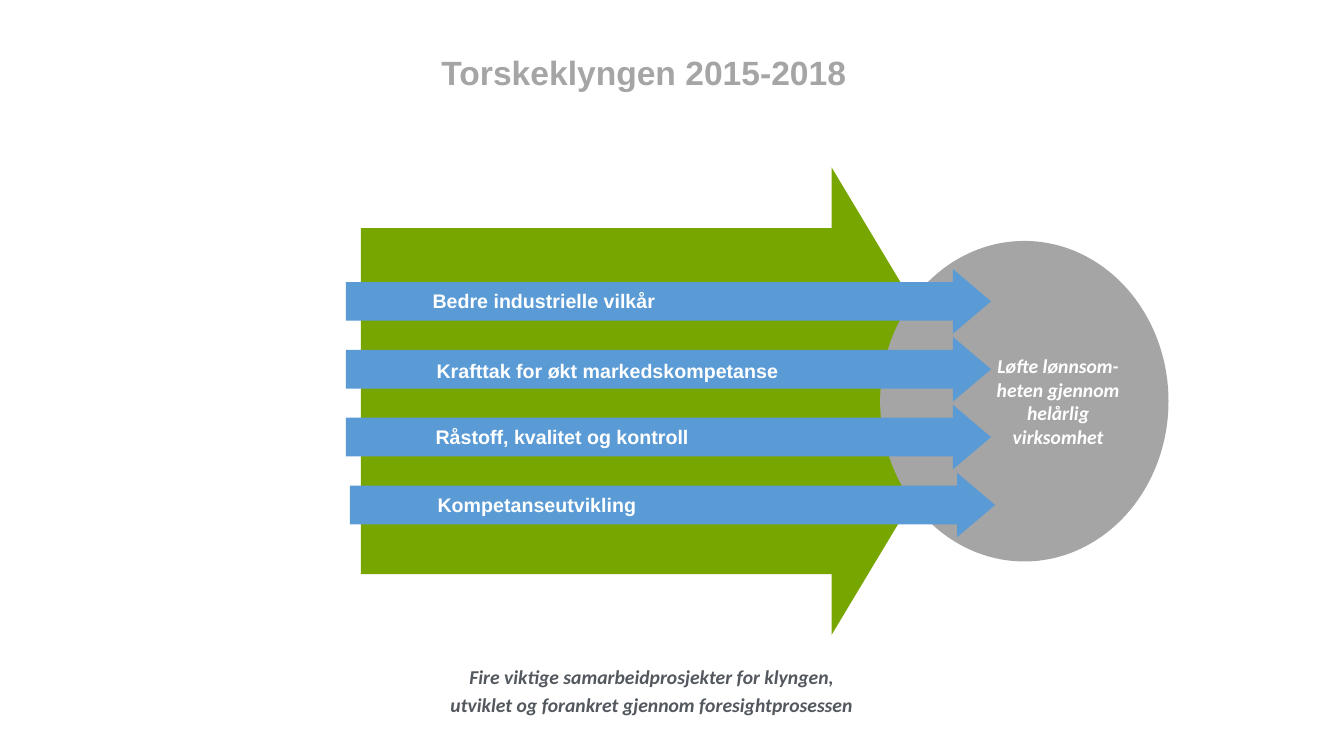
import pptx
import pptx.util
import pptx.dml.color
import pptx.enum.shapes
import pptx.enum.text

Inches = pptx.util.Inches
Pt = pptx.util.Pt
RGBColor = pptx.dml.color.RGBColor
MSO_SHAPE = pptx.enum.shapes.MSO_SHAPE
PP_ALIGN = pptx.enum.text.PP_ALIGN

WHITE = RGBColor(0xFF, 0xFF, 0xFF)
GREEN = RGBColor(0x78, 0xA6, 0x00)
GRAY = RGBColor(0xA5, 0xA5, 0xA5)
BLUE = RGBColor(0x5B, 0x9B, 0xD5)
DARK = RGBColor(0x53, 0x58, 0x5F)

PROJECTS = [
    ("Bedre industrielle vilkår", 3.43, 4.25, 2.83),
    ("Krafttak for økt markedskompetanse", 3.43, 4.29, 3.52),
    ("Råstoff, kvalitet og kontroll", 3.43, 4.28, 4.18),
    ("Kompetanseutvikling", 3.47, 4.3, 4.85),
]
ARROW_TOP = 2.67
ARROW_BOTTOM = 4.69
ARROW_STEP = (ARROW_BOTTOM - ARROW_TOP) / (len(PROJECTS) - 1)


class SlideBuilder:
    heading_font = "Arial"
    accent_font = "Calibri"
    text_size = 14

    def __init__(self, slide):
        self.s = slide

    def set_text(self, sp, text, color, font, size, align, italic=False, inset=0.04):
        tf = sp.text_frame
        tf.text = text
        tf.word_wrap = True
        tf.auto_size = pptx.enum.text.MSO_AUTO_SIZE.NONE
        tf.vertical_anchor = pptx.enum.text.MSO_ANCHOR.MIDDLE
        tf.margin_left = tf.margin_right = Inches(inset)
        tf.margin_top = tf.margin_bottom = Inches(inset)
        for p in tf.paragraphs:
            p.alignment = align
            for r in p.runs:
                r.font.name = font
                r.font.size = Pt(size)
                r.font.bold = True
                r.font.italic = italic
                r.font.color.rgb = color
        return tf

    def title(self, text, left, top, width, height):
        sp = self.s.shapes.title
        sp.left, sp.top = Inches(left), Inches(top)
        sp.width, sp.height = Inches(width), Inches(height)
        self.set_text(sp, text, GRAY, self.heading_font, 24, PP_ALIGN.CENTER)

    def shape(self, kind, left, top, width, height, color, adjustments=()):
        sp = self.s.shapes.add_shape(
            kind, Inches(left), Inches(top), Inches(width), Inches(height))
        sp.shadow.inherit = False
        sp.fill.solid()
        sp.fill.fore_color.rgb = color
        sp.line.fill.background()
        for i, value in enumerate(adjustments):
            sp.adjustments[i] = value

    def textbox(self, left, top, width, height):
        return self.s.shapes.add_textbox(
            Inches(left), Inches(top), Inches(width), Inches(height))

    def label(self, text, left, top, width, height):
        sp = self.textbox(left, top, width, height)
        self.set_text(sp, text, WHITE, self.heading_font, self.text_size, PP_ALIGN.LEFT)

    def statement(self, text, left, top, width, height, color, inset=0.04):
        sp = self.textbox(left, top, width, height)
        return self.set_text(sp, text, color, self.accent_font, self.text_size,
                             PP_ALIGN.CENTER, italic=True, inset=inset)

    def caption(self, text, left, top, width, height):
        tf = self.statement(text, left, top, width, height, DARK, inset=0.05)
        for p in tf.paragraphs:
            p.line_spacing = 1.2
            pPr = p._p.get_or_add_pPr()
            pPr.set("marL", str(Inches(0.35)))
            pPr.set("indent", "0")


def main():
    prs = pptx.Presentation()
    prs.slide_width = Inches(13.33)
    prs.slide_height = Inches(7.5)
    b = SlideBuilder(prs.slides.add_slide(prs.slide_layouts[5]))

    b.title("Torskeklyngen 2015-2018", 2.84, 0.47, 7.09, 0.48)
    b.shape(MSO_SHAPE.RIGHT_ARROW, 3.58, 1.66, 6.06, 4.64, GREEN, (0.74, 0.3))
    b.shape(MSO_SHAPE.OVAL, 8.73, 2.39, 2.86, 3.18, GRAY)
    b.statement("Løfte lønnsom-heten gjennom helårlig virksomhet",
                9.75, 3.47, 1.49, 1.02, WHITE)
    for i, (name, arrow_left, label_left, label_top) in enumerate(PROJECTS):
        b.shape(MSO_SHAPE.RIGHT_ARROW, arrow_left, ARROW_TOP + i * ARROW_STEP,
                6.4, 0.64, BLUE, (0.6, 0.59))
        b.label(name, label_left, label_top, 4.43, 0.31)
    b.caption("Fire viktige samarbeidprosjekter for klyngen,\n"
              "utviklet og forankret gjennom foresightprosessen",
              2.93, 6.49, 6.72, 0.67)

    prs.save("out.pptx")


if __name__ == "__main__":
    main()
